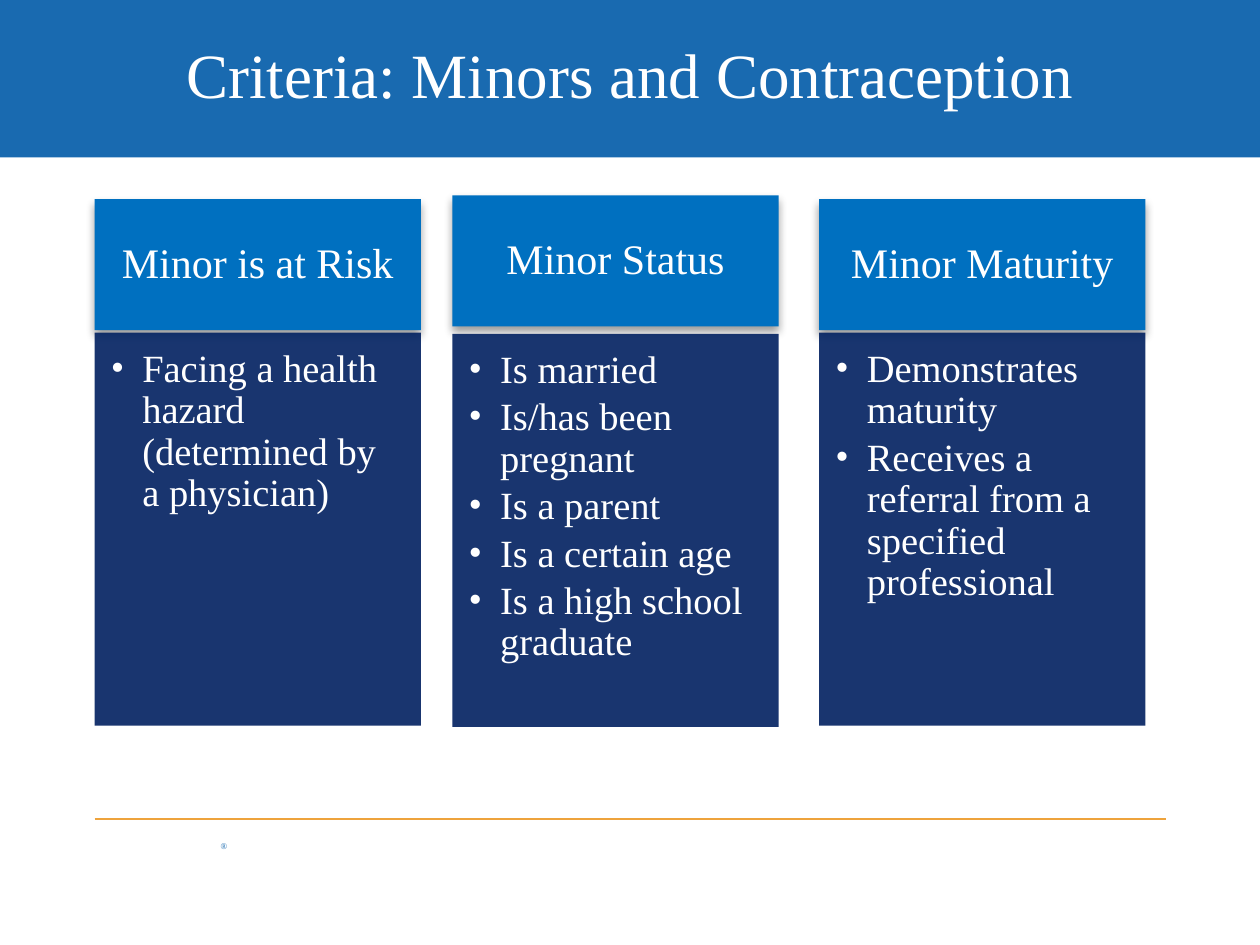
"""Builds the slide on criteria for minors and contraception."""
from lxml import etree
from pptx import Presentation
from pptx.dml.color import RGBColor
from pptx.enum.shapes import MSO_CONNECTOR, MSO_SHAPE
from pptx.enum.text import MSO_ANCHOR, PP_ALIGN
from pptx.oxml import parse_xml
from pptx.oxml.ns import nsdecls, qn
from pptx.util import Inches, Pt

RECT = MSO_SHAPE.RECTANGLE
LINE = MSO_CONNECTOR.STRAIGHT
LEFT, CENTER = PP_ALIGN.LEFT, PP_ALIGN.CENTER
TOP, MIDDLE = MSO_ANCHOR.TOP, MSO_ANCHOR.MIDDLE

TITLE = "Criteria: Minors and Contraception"
MARK = "®"
CARDS = [
    {"left": 0.75, "top": 1.58, "body": 2.64, "head": "Minor is at Risk",
     "items": ["Facing a health hazard (determined by a physician)"]},
    {"left": 3.59, "top": 1.55, "body": 2.65, "head": "Minor Status",
     "items": ["Is married", "Is/has been pregnant", "Is a parent",
               "Is a certain age", "Is a high school graduate"]},
    {"left": 6.5, "top": 1.58, "body": 2.64, "head": "Minor Maturity",
     "items": ["Demonstrates maturity",
               "Receives a referral from a specified professional"]},
]
COLORS = {"band": "196AB0", "head": "0070C0", "body": "002060",
          "rule": "EEA33C", "text": "FFFFFF"}
FONT = "Times New Roman"
WIDTH, HEAD, BODY = 2.59, 1.04, 3.12
SHADOW = (f'<a:outerShdw {nsdecls("a")} blurRad="66040" dist="38100" '
          'dir="5400000" rotWithShape="0"><a:srgbClr val="000000">'
          '<a:alpha val="40000"/></a:srgbClr></a:outerShdw>')


def color(key):
    return RGBColor.from_string(COLORS[key])


def style(par, size, key="text", align=LEFT):
    par.alignment = align
    for run in par.runs:
        run.font.size = Pt(size)
        run.font.name = FONT
        run.font.color.rgb = color(key)


def inset(frame, left, top, right, bottom):
    frame.margin_left, frame.margin_top = Inches(left), Inches(top)
    frame.margin_right, frame.margin_bottom = Inches(right), Inches(bottom)


def add_box(slide, left, top, width, height, key):
    box = slide.shapes.add_shape(
        RECT, Inches(left), Inches(top), Inches(width), Inches(height))
    box.fill.solid()
    box.fill.fore_color.rgb = color(key)
    box.line.fill.background()
    box.shadow.inherit = False
    return box


def add_bullet(par):
    props = par._p.get_or_add_pPr()
    props.set("marL", str(Inches(0.25)))
    props.set("indent", str(-Inches(0.25)))
    etree.SubElement(props, qn("a:buFont")).set("typeface", FONT)
    etree.SubElement(props, qn("a:buChar")).set("char", "•")


def add_card(slide, card):
    head = add_box(slide, card["left"], card["top"], WIDTH, HEAD, "head")
    head._element.spPr.find(qn("a:effectLst")).append(parse_xml(SHADOW))
    frame = head.text_frame
    frame.text = card["head"]
    frame.word_wrap = True
    frame.vertical_anchor = MIDDLE
    inset(frame, 0.19, 0.11, 0.19, 0.11)
    frame.paragraphs[0].line_spacing = 0.9
    style(frame.paragraphs[0], 24, align=CENTER)

    body = add_box(slide, card["left"], card["body"], WIDTH, BODY, "body")
    tint = body._element.spPr.find(qn("a:solidFill"))[0]
    etree.SubElement(tint, qn("a:alpha")).set("val", "90000")
    frame = body.text_frame
    frame.text = "\n".join(card["items"])
    frame.word_wrap = True
    frame.vertical_anchor = TOP
    inset(frame, 0.13, 0.13, 0.17, 0.19)
    for par in frame.paragraphs:
        add_bullet(par)
        par.line_spacing = 0.9
        par.space_after = Pt(3.3)
        style(par, 22)


def add_title(slide):
    title = slide.shapes.title
    title.left, title.top = Inches(0.5), Inches(0.08)
    title.width, title.height = Inches(9), Inches(1)
    frame = title.text_frame
    frame.text = TITLE
    frame.vertical_anchor = MIDDLE
    style(frame.paragraphs[0], 36, align=CENTER)
    band = add_box(slide, 0, 0, 10, 1.25, "band")
    title._element.addprevious(band._element)


def add_foot(slide):
    rule = slide.shapes.add_connector(
        LINE, Inches(0.75), Inches(6.5), Inches(9.25), Inches(6.5))
    rule.line.color.rgb = color("rule")
    rule.line.width = Pt(0.75)
    etree.SubElement(rule._element.spPr, qn("a:effectLst"))
    mark = slide.shapes.add_textbox(
        Inches(1.75), Inches(6.67), Inches(0.25), Inches(0.08))
    frame = mark.text_frame
    frame.text = MARK
    frame.word_wrap = True
    inset(frame, 0, 0, 0, 0)
    style(frame.paragraphs[0], 5, "band")


def main():
    deck = Presentation()
    deck.slide_width, deck.slide_height = Inches(10), Inches(7.5)
    slide = deck.slides.add_slide(deck.slide_layouts[5])
    add_title(slide)
    add_foot(slide)
    for card in CARDS:
        add_card(slide, card)
    deck.save("out.pptx")


if __name__ == "__main__":
    main()
